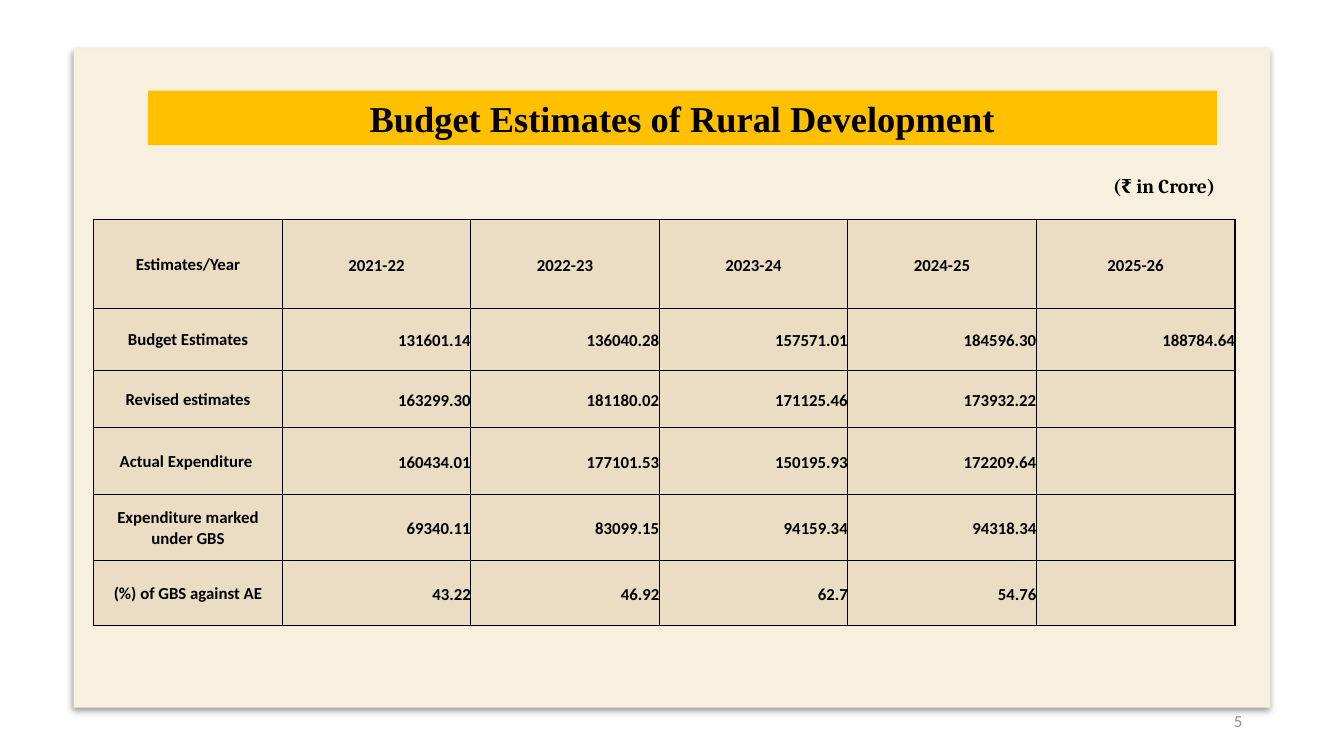
import pptx
import pptx.dml.color
import pptx.enum.shapes
import pptx.enum.text
import pptx.oxml
import pptx.oxml.ns
import pptx.util
from pptx.util import Inches

NS = 'xmlns:a="http://schemas.openxmlformats.org/drawingml/2006/main"'
ALIGN = pptx.enum.text.PP_ALIGN
MIDDLE = pptx.enum.text.MSO_ANCHOR.MIDDLE


def color(code):
    return pptx.dml.color.RGBColor.from_string(code)


class Deck:
    """Holds the style and the current slide."""

    ink = "000000"
    panel = "F7F0DE"
    band = "FFC000"
    sand = "EBDDC3"
    gray = "8C8C8C"

    def __init__(self, slide):
        self.slide = slide

    def text(self, frame, words, size, font, align, ink=ink, bold=True, lead=None):
        para = frame.paragraphs[0]
        para.alignment = align
        para.line_spacing = lead
        run = para.add_run()
        run.text = words
        run.font.size = pptx.util.Pt(size)
        run.font.name = font
        run.font.bold = bold
        run.font.color.rgb = color(ink)

    def rect(self, left, top, width, height, fill):
        kind = pptx.enum.shapes.MSO_SHAPE.RECTANGLE
        shape = self.slide.shapes.add_shape(
            kind, Inches(left), Inches(top), Inches(width), Inches(height))
        shape.shadow.inherit = False
        shape.fill.solid()
        shape.fill.fore_color.rgb = color(fill)
        shape.line.fill.background()
        return shape

    def shade(self, shape):
        glow = pptx.oxml.parse_xml(
            f'<a:outerShdw {NS} blurRad="50800" dist="38100" dir="5400000" '
            f'algn="t" rotWithShape="0"><a:srgbClr val="{self.ink}">'
            '<a:alpha val="40000"/></a:srgbClr></a:outerShdw>')
        shape.element.spPr.find(pptx.oxml.ns.qn("a:effectLst")).append(glow)

    def label(self, left, top, width, height, words, size, font, **style):
        box = self.slide.shapes.add_textbox(
            Inches(left), Inches(top), Inches(width), Inches(height))
        box.text_frame.word_wrap = True
        self.text(box.text_frame, words, size, font, ALIGN.RIGHT, **style)
        return box

    def cell(self, cell, words, head, lead):
        props = cell._tc.get_or_add_tcPr()
        for side in "LRTB":
            props.append(pptx.oxml.parse_xml(
                f'<a:ln{side} {NS} w="12700"><a:solidFill>'
                f'<a:srgbClr val="{self.ink}"/></a:solidFill></a:ln{side}>'))
        cell.fill.solid()
        cell.fill.fore_color.rgb = color(self.sand)
        cell.vertical_anchor = MIDDLE
        pad = Inches(0.01 if head else 0)
        cell.margin_left = cell.margin_right = cell.margin_top = pad
        cell.margin_bottom = 0
        if words:
            align = ALIGN.CENTER if head else ALIGN.RIGHT
            self.text(cell.text_frame, words, 12, "Calibri", align, lead=lead)

    def table(self, left, top, widths, heights, rows):
        grid = self.slide.shapes.add_table(
            len(heights), len(widths), Inches(left), Inches(top),
            Inches(sum(widths)), Inches(sum(heights))).table
        for col, width in zip(grid.columns, widths):
            col.width = Inches(width)
        for r, (height, row) in enumerate(zip(heights, rows)):
            grid.rows[r].height = Inches(height)
            for c in range(len(widths)):
                words = row[c] if c < len(row) else ""
                self.cell(grid.cell(r, c), words, r == 0 or c == 0,
                          1.15 if c else None)


def main():
    show = pptx.Presentation()
    show.slide_width = Inches(13.33)
    show.slide_height = Inches(7.5)
    deck = Deck(show.slides.add_slide(show.slide_layouts[6]))

    deck.shade(deck.rect(0.73, 0.48, 11.87, 6.54, deck.panel))
    title = deck.rect(1.47, 0.9, 10.6, 0.54, deck.band)
    deck.text(title.text_frame, "Budget Estimates of Rural Development",
              26, "Times New Roman", ALIGN.CENTER)
    deck.label(10.14, 1.68, 2.01, 0.38, "(₹ in Crore)", 14, "Cambria")

    rows = [
        ["Estimates/Year", "2021-22", "2022-23", "2023-24", "2024-25", "2025-26"],
        ["Budget Estimates", "131601.14", "136040.28", "157571.01", "184596.30",
         "188784.64"],
        ["Revised estimates", "163299.30", "181180.02", "171125.46", "173932.22"],
        ["Actual Expenditure ", "160434.01", "177101.53", "150195.93", "172209.64"],
        ["Expenditure marked under GBS", "69340.11", "83099.15", "94159.34",
         "94318.34"],
        ["(%) of GBS against AE", "43.22", "46.92", "62.7", "54.76"],
    ]
    deck.table(0.93, 2.18, [1.87] * 5 + [1.97],
               [0.88, 0.62, 0.56, 0.67, 0.65, 0.65], rows)

    page = deck.label(9.42, 6.95, 3, 0.4, "5", 12, "Calibri",
                      ink=deck.gray, bold=False)
    page.text_frame.vertical_anchor = MIDDLE
    show.save("out.pptx")


if __name__ == "__main__":
    main()
